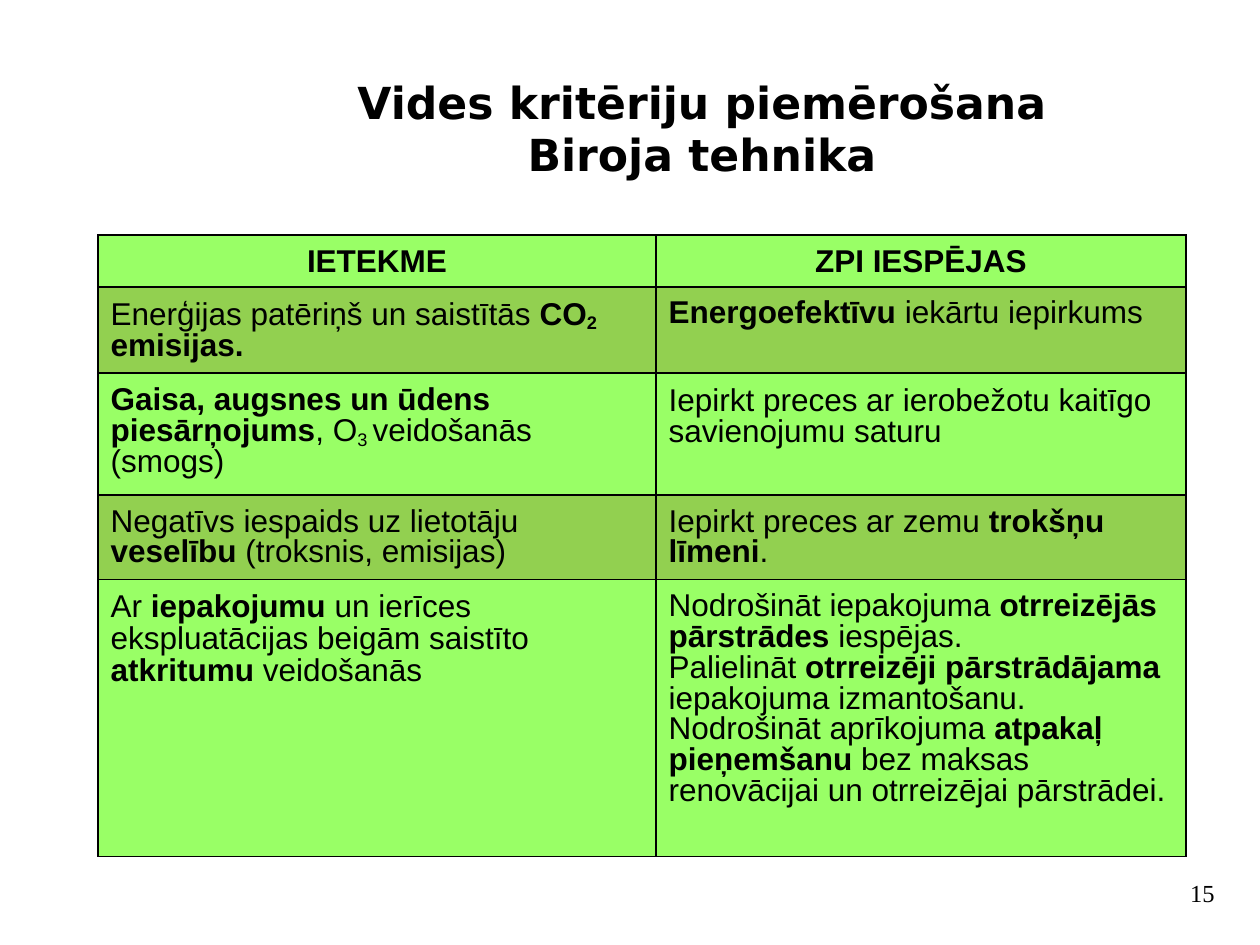
import lxml.etree
import pptx
import pptx.dml.color
import pptx.enum.text
import pptx.oxml.ns
import pptx.util

PX = 914400 // 126
CENTER = pptx.enum.text.PP_ALIGN.CENTER
LEFT = pptx.enum.text.PP_ALIGN.LEFT
LIGHT, DARK = "99FF66", "92D050"
COLUMNS = [558, 530]
ROWS = [
    (49, LIGHT, CENTER, [(0.87, ["*IETEKME*"]), (0.87, ["*ZPI IESPĒJAS*"])]),
    (81, DARK, LEFT, [
        (0.87, ["Enerģijas patēriņš un saistītās *CO~2 ~emisijas.*"]),
        (0.87, ["*Energoefektīvu* iekārtu iepirkums"]),
    ]),
    (122, LIGHT, LEFT, [
        (0.87, ["*Gaisa, augsnes un ūdens piesārņojums*, O~3 ~veidošanās (smogs)"]),
        (0.9, ["Iepirkt preces ar ierobežotu kaitīgo savienojumu saturu"]),
    ]),
    (81, DARK, LEFT, [
        (0.87, ["Negatīvs iespaids uz lietotāju *veselību* (troksnis, emisijas)"]),
        (0.87, ["Iepirkt preces ar zemu *trokšņu līmeni*."]),
    ]),
    (277, LIGHT, LEFT, [
        (0.9, ["Ar *iepakojumu* un ierīces ekspluatācijas beigām saistīto "
               "*atkritumu* veidošanās"]),
        (0.87, ["Nodrošināt iepakojuma *otrreizējās pārstrādes *iespējas.",
                "Palielināt *otrreizēji pārstrādājama *iepakojuma izmantošanu.",
                "Nodrošināt aprīkojuma *atpakaļ pieņemšanu *bez maksas "
                "renovācijai un otrreizējai pārstrādei."]),
    ]),
]


def px(length):
    return pptx.util.Emu(length * PX)


def color(value):
    return pptx.dml.color.RGBColor.from_string(value)


def set_font(para, name, size, bold=False):
    para.font.name = name
    para.font.size = pptx.util.Pt(size)
    para.font.bold = bold
    para.font.color.rgb = color("000000")


def add_label(page, box, lines, name, size, bold=False, top=6):
    frame = page.shapes.add_textbox(*map(px, box)).text_frame
    frame.word_wrap = True
    frame.margin_left = frame.margin_right = 0
    frame.margin_top = px(top)
    para = frame.paragraphs[0]
    para.text = "\v".join(lines)
    para.alignment = CENTER
    set_font(para, name, size, bold)


def add_marked_text(para, text):
    for index, part in enumerate(text.split("*")):
        for level, piece in enumerate(part.split("~")):
            if piece:
                span = para.add_run()
                span.text = piece
                span.font.bold = index % 2 == 1
                if level % 2:
                    span.font._element.set("baseline", "-14000")


def add_borders(cell):
    properties = cell._tc.get_or_add_tcPr()
    for position, side in enumerate(["lnL", "lnR", "lnT", "lnB"]):
        line = lxml.etree.Element(pptx.oxml.ns.qn("a:" + side), w="12700")
        fill = lxml.etree.SubElement(line, pptx.oxml.ns.qn("a:solidFill"))
        lxml.etree.SubElement(fill, pptx.oxml.ns.qn("a:srgbClr"), val="000000")
        properties.insert(position, line)


def fill_cell(cell, fill, alignment, spacing, texts):
    cell.fill.solid()
    cell.fill.fore_color.rgb = color(fill)
    add_borders(cell)
    cell.margin_left = cell.margin_right = cell.margin_top = pptx.util.Inches(0.1)
    cell.margin_bottom = pptx.util.Inches(0.05)
    frame = cell.text_frame
    for index, text in enumerate(texts):
        para = frame.add_paragraph() if index else frame.paragraphs[0]
        para.alignment = alignment
        para.line_spacing = spacing
        set_font(para, "Arial", 18)
        add_marked_text(para, text)


def add_criteria_table(page, left, top):
    height = sum(row[0] for row in ROWS)
    table = page.shapes.add_table(
        len(ROWS), len(COLUMNS), px(left), px(top), px(sum(COLUMNS)), px(height)
    ).table
    table.first_row = table.horz_banding = False
    for column, width in zip(table.columns, COLUMNS):
        column.width = px(width)
    for row, (height, fill, alignment, contents) in zip(table.rows, ROWS):
        row.height = px(height)
        for cell, (spacing, texts) in zip(row.cells, contents):
            fill_cell(cell, fill, alignment, spacing, texts)


def main():
    deck = pptx.Presentation()
    deck.slide_width, deck.slide_height = px(1260), px(945)
    page = deck.slides.add_slide(deck.slide_layouts[6])
    add_label(page, (282, 65, 840, 100),
              ["Vides kritēriju piemērošana", "Biroja tehnika"],
              "DejaVu Sans", 25.2, bold=True, top=10)
    add_label(page, (1176, 872, 53, 42), ["15"], "Times New Roman", 14)
    add_criteria_table(page, 98, 235)
    deck.save("out.pptx")


if __name__ == "__main__":
    main()
